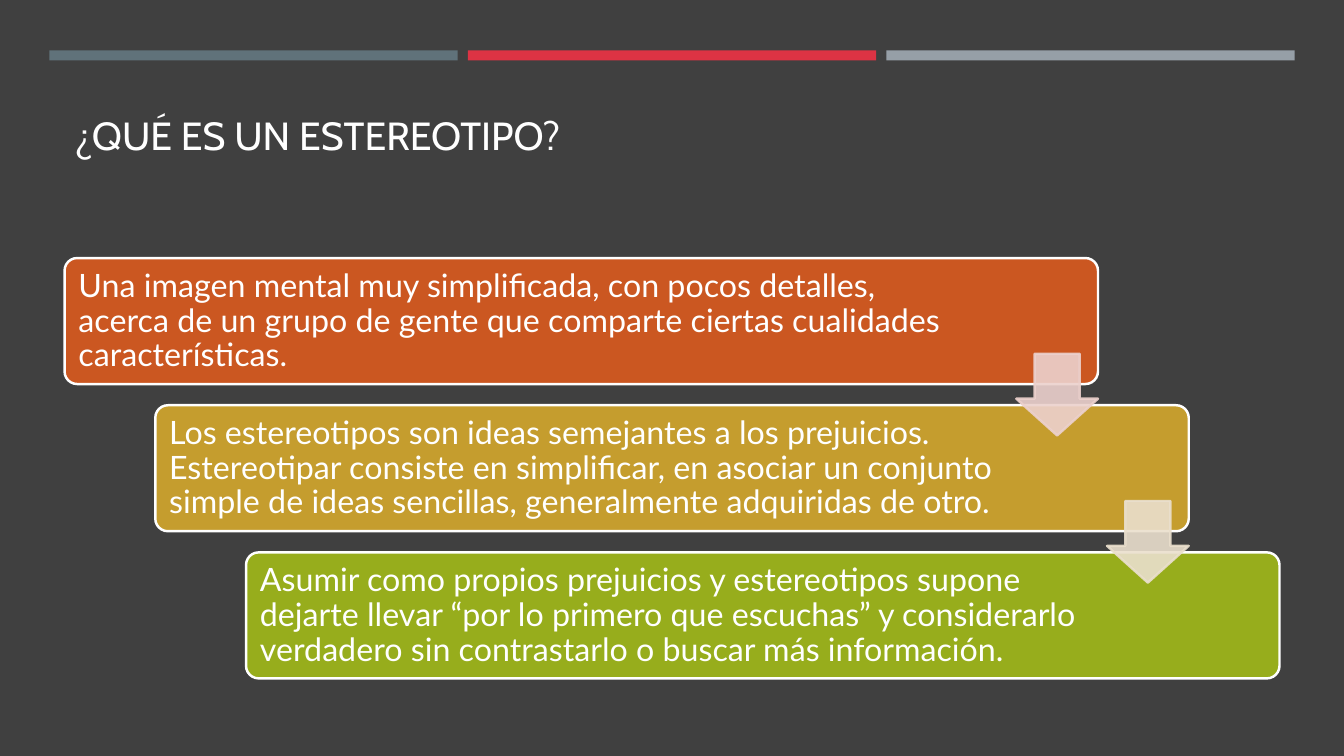
"""Builds the slide that explains what a stereotype is in three descending steps."""
from dataclasses import dataclass

from lxml import etree
from pptx import Presentation
from pptx.dml.color import RGBColor
from pptx.enum.shapes import MSO_SHAPE
from pptx.enum.text import MSO_ANCHOR
from pptx.oxml.ns import qn
from pptx.util import Inches, Pt

RECTANGLE = MSO_SHAPE.RECTANGLE
ROUNDED = MSO_SHAPE.ROUNDED_RECTANGLE
DOWN_ARROW = MSO_SHAPE.DOWN_ARROW
BOTTOM = MSO_ANCHOR.BOTTOM
MIDDLE = MSO_ANCHOR.MIDDLE


@dataclass(frozen=True)
class Theme:
    """Colours, fonts and sizes of the slide."""
    base: str = "000000"
    panel: str = "404040"
    white: str = "FFFFFF"
    bars: tuple = ("60727A", "DD3344", "969FA7")
    cards: tuple = ("CB5721", "C59D2E", "97AD1C")
    arrows: tuple = ("ECD1CD", "EADFCD")
    title_font: str = "Cabin"
    body_font: str = "Lato"
    title_size: float = 28
    body_size: float = 23
    outline: float = 1.75
    arrow_opacity: int = 90


class SlideBuilder:
    """Holds the theme and the current slide, and draws each kind of element."""

    def __init__(self, presentation, theme):
        """Adds a blank slide with the base background."""
        self.theme = theme
        self.slide = presentation.slides.add_slide(presentation.slide_layouts[6])
        background = self.slide.background.fill
        background.solid()
        background.fore_color.rgb = RGBColor.from_string(theme.base)

    def shape(self, kind, box, color, line=None, adjustments=(), opacity=100):
        """Draws a filled preset shape with an optional outline."""
        shape = self.slide.shapes.add_shape(kind, *map(Inches, box))
        shape.shadow.inherit = False
        for index, value in enumerate(adjustments):
            shape.adjustments[index] = value
        shape.fill.solid()
        shape.fill.fore_color.rgb = RGBColor.from_string(color)
        if line:
            shape.line.color.rgb = RGBColor.from_string(line)
            shape.line.width = Pt(self.theme.outline)
        else:
            shape.line.fill.background()
        if opacity < 100:
            for color_element in shape._element.spPr.iter(qn("a:srgbClr")):
                alpha = etree.SubElement(color_element, qn("a:alpha"))
                alpha.set("val", str(opacity * 1000))

    def text(self, box, words, font, size, frame_format, paragraph_format):
        """Draws a wrapped text box with one paragraph."""
        frame = self.slide.shapes.add_textbox(*map(Inches, box)).text_frame
        paragraph = frame.paragraphs[0]
        run = paragraph.add_run()
        run.text = words
        run.font.color.rgb = RGBColor.from_string(self.theme.white)
        formats = (
            (frame, {"word_wrap": True, **frame_format}),
            (paragraph, paragraph_format),
            (run.font, {"name": font, "size": Pt(size)}),
        )
        for target, values in formats:
            for name, value in values.items():
                setattr(target, name, value)

    def title(self, box, words):
        """Draws the slide title, raised above the foot of its box."""
        frame_format = {"vertical_anchor": BOTTOM, "margin_bottom": Inches(0.5)}
        self.text(box, words, self.theme.title_font, self.theme.title_size, frame_format, {})

    def card(self, left, top, text_width, color, words):
        """Draws one rounded step and its text."""
        self.shape(ROUNDED, (left, top, 10.25, 1.25), color, self.theme.white, (0.1,))
        margins = ("margin_left", "margin_top", "margin_right", "margin_bottom")
        frame_format = {"vertical_anchor": MIDDLE, **dict.fromkeys(margins, Inches(0.1))}
        self.text((left + 0.04, top + 0.04, text_width, 1.18), words, self.theme.body_font,
                  self.theme.body_size, frame_format, {"line_spacing": 0.9})

    def arrow(self, left, top, color):
        """Draws a translucent arrow leading to the next step."""
        self.shape(DOWN_ARROW, (left, top, 0.81, 0.81), color, color, (0.55, 0.45),
                   self.theme.arrow_opacity)


STEPS = (
    (8.9, "Una imagen mental muy simplificada, con pocos detalles, acerca de un grupo de gente "
          "que comparte ciertas cualidades características."),
    (8.46, "Los estereotipos son ideas semejantes a los prejuicios. Estereotipar consiste en "
           "simplificar, en asociar un conjunto simple de ideas sencillas, generalmente "
           "adquiridas de otro."),
    (8.46, "Asumir como propios prejuicios y estereotipos supone dejarte llevar “por lo primero "
           "que escuchas” y considerarlo verdadero sin contrastarlo o buscar más información."),
)
STEP_RIGHT, STEP_DOWN = 0.9, 1.46


def main():
    """Builds and saves the presentation."""
    presentation = Presentation()
    presentation.slide_width = Inches(13.33)
    presentation.slide_height = Inches(7.5)
    theme = Theme()
    builder = SlideBuilder(presentation, theme)
    builder.shape(RECTANGLE, (0, 0, 13.33, 7.5), theme.panel)
    builder.title((0.64, 0.77, 12.06, 1.3), "¿QUÉ ES UN ESTEREOTIPO?")
    for index, color in enumerate(theme.bars):
        builder.shape(RECTANGLE, (0.49 + index * 4.15, 0.5, 4.05, 0.1), color)
    for index, (color, (text_width, words)) in enumerate(zip(theme.cards, STEPS)):
        builder.card(0.64 + index * STEP_RIGHT, 2.56 + index * STEP_DOWN, text_width, color, words)
    for index, color in enumerate(theme.arrows):
        builder.arrow(10.08 + index * STEP_RIGHT, 3.51 + index * STEP_DOWN, color)
    presentation.save("out.pptx")


if __name__ == "__main__":
    main()
